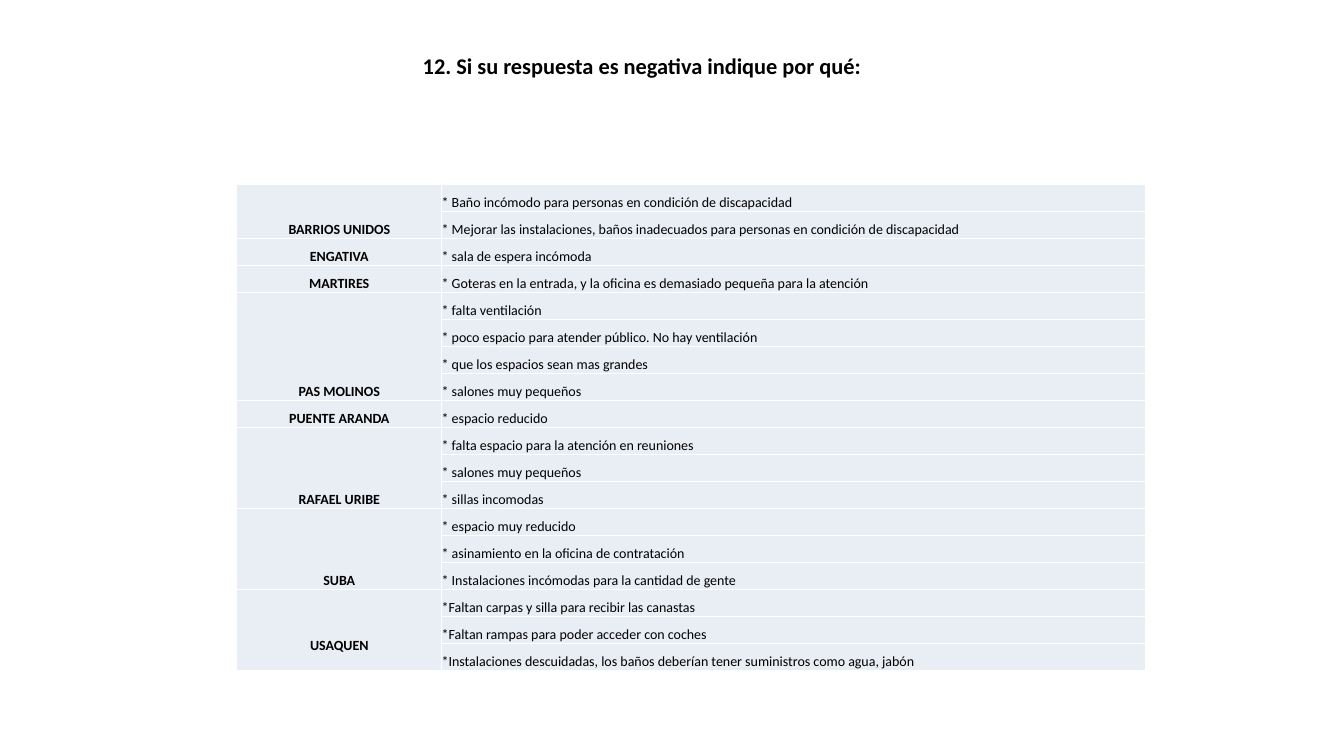
from lxml import etree
from pptx import Presentation
from pptx.dml.color import RGBColor
from pptx.enum.text import MSO_ANCHOR, PP_ALIGN
from pptx.oxml.ns import qn
from pptx.util import Cm, Pt

LEFT, CENTER = PP_ALIGN.LEFT, PP_ALIGN.CENTER
MIDDLE, BOTTOM = MSO_ANCHOR.MIDDLE, MSO_ANCHOR.BOTTOM

FONT = "Calibri"
BLACK, WHITE, PALE_BLUE = "000000", "FFFFFF", "E9EDF4"
ROW_HEIGHT = Cm(0.68)
COLUMN_WIDTHS = (Cm(5.16), Cm(17.75))

COMPLAINTS = {
    "BARRIOS UNIDOS": [
        "* Baño incómodo para personas en condición de discapacidad",
        "* Mejorar las instalaciones, baños inadecuados para personas en condición de discapacidad",
    ],
    "ENGATIVA": ["* sala de espera incómoda"],
    "MARTIRES": ["* Goteras en la entrada, y la oficina es demasiado pequeña para la atención"],
    "PAS MOLINOS": [
        "* falta ventilación",
        "* poco espacio para atender público. No hay ventilación",
        "* que los espacios sean mas grandes",
        "* salones muy pequeños",
    ],
    "PUENTE ARANDA": ["* espacio reducido"],
    "RAFAEL URIBE": [
        "* falta espacio para la atención en reuniones",
        "* salones muy pequeños",
        "* sillas incomodas",
    ],
    "SUBA": [
        "* espacio muy reducido",
        "* asinamiento en la oficina de contratación",
        "* Instalaciones incómodas para la cantidad de gente",
    ],
    "USAQUEN": [
        "*Faltan carpas y silla para recibir las canastas",
        "*Faltan rampas para poder acceder con coches",
        "*Instalaciones descuidadas, los baños deberían tener suministros como agua, jabón",
    ],
}


def rgb(color):
    return RGBColor.from_string(color)


def write(tf, text, size=10, bold=False, align=LEFT, color=BLACK):
    p = tf.paragraphs[0]
    p.alignment = align
    r = p.add_run()
    r.text = text
    r.font.name = FONT
    r.font.size = Pt(size)
    r.font.bold = bold
    r.font.color.rgb = rgb(color)


def add_title(s, text):
    tf = s.shapes.add_textbox(Cm(5.74), Cm(0.84), Cm(20.88), Cm(1.6)).text_frame
    tf.word_wrap = True
    tf.vertical_anchor = MIDDLE
    write(tf, text, size=16, bold=True, align=CENTER)


def set_borders(cell, color, width):
    tc_pr = cell._tc.get_or_add_tcPr()
    for side in ("lnL", "lnR", "lnT", "lnB"):
        ln = etree.SubElement(tc_pr, qn(f"a:{side}"), w=str(width))
        fill = etree.SubElement(ln, qn("a:solidFill"))
        etree.SubElement(fill, qn("a:srgbClr"), val=color)


def format_cell(cell):
    set_borders(cell, WHITE, Pt(1))
    cell.fill.solid()
    cell.fill.fore_color.rgb = rgb(PALE_BLUE)
    cell.margin_left = cell.margin_right = cell.margin_top = cell.margin_bottom = 0
    cell.vertical_anchor = BOTTOM


def add_complaints_table(s, groups):
    """Add one row per complaint, with the place merged over its rows."""
    count = sum(len(items) for items in groups.values())
    table = s.shapes.add_table(count, 2, Cm(5.97), Cm(4.65),
                               sum(COLUMN_WIDTHS), ROW_HEIGHT * count).table
    table.first_row = table.horz_banding = False
    for column, width in zip(table.columns, COLUMN_WIDTHS):
        column.width = width
    for row in table.rows:
        row.height = ROW_HEIGHT
    for cell in table.iter_cells():
        format_cell(cell)

    top = 0
    for place, items in groups.items():
        place_cell = table.cell(top, 0)
        if len(items) > 1:
            place_cell.merge(table.cell(top + len(items) - 1, 0))
        write(place_cell.text_frame, place, bold=True, align=CENTER)
        for i, item in enumerate(items, top):
            write(table.cell(i, 1).text_frame, item)
        top += len(items)
    # The last place sits a little above the bottom of its cell
    place_cell.margin_bottom = Cm(0.41)


def main():
    prs = Presentation()
    prs.slide_width, prs.slide_height = Cm(33.87), Cm(19.05)
    s = prs.slides.add_slide(prs.slide_layouts[6])
    add_title(s, "12. Si su respuesta es negativa indique por qué:")
    add_complaints_table(s, COMPLAINTS)
    prs.save("out.pptx")


if __name__ == "__main__":
    main()
